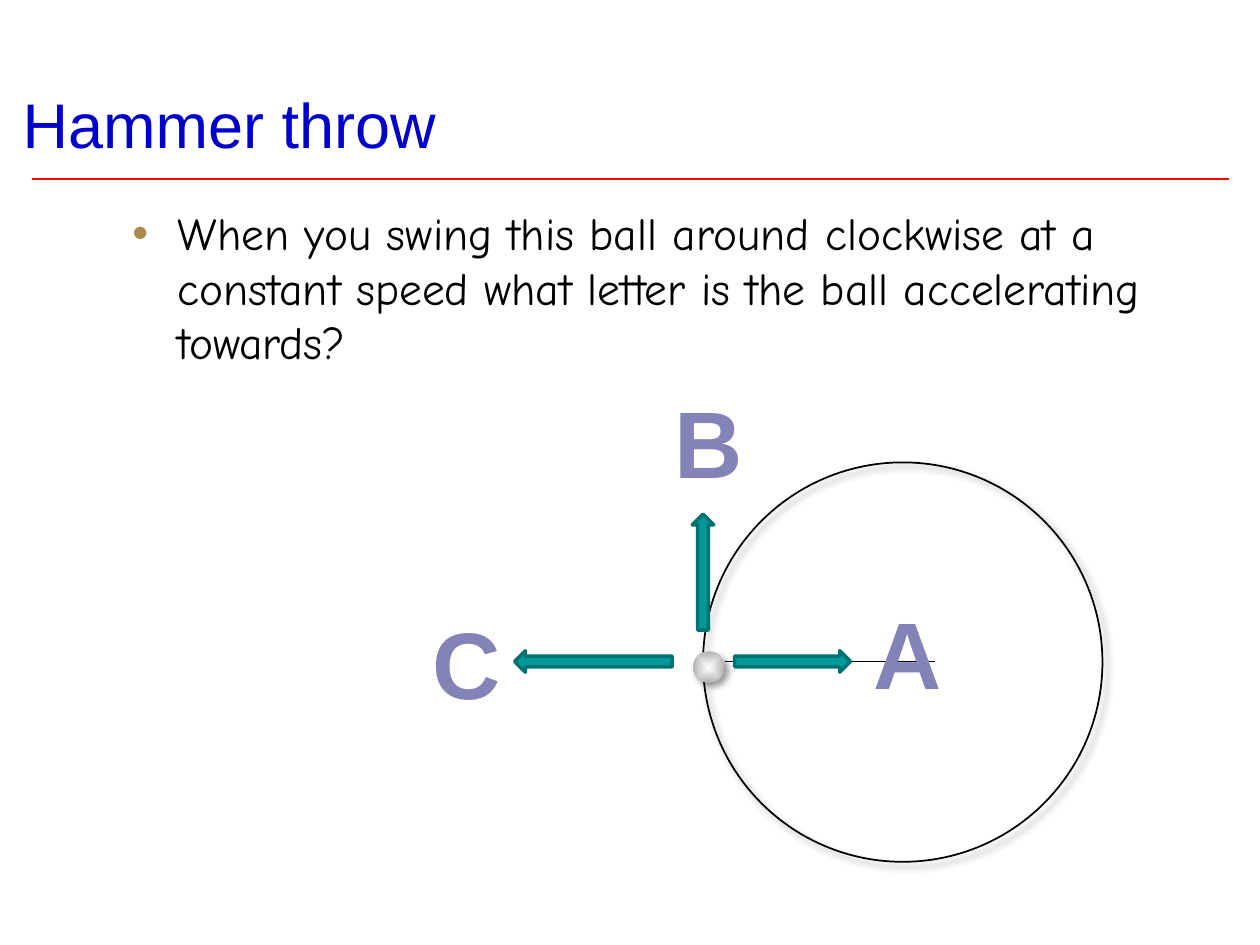
from pptx import Presentation
from pptx.dml.color import RGBColor
from pptx.enum.shapes import MSO_CONNECTOR, MSO_SHAPE
from pptx.enum.text import MSO_ANCHOR, MSO_AUTO_SIZE, PP_ALIGN
from pptx.oxml import parse_xml
from pptx.oxml.ns import nsdecls, qn
from pptx.util import Inches, Pt

COLORS = {
    "title": "0000CC", "rule": "FF0000", "bullet": "A98C4B", "ink": "000000",
    "letter": "8383B7", "arrow": "009999", "arrow_edge": "007171",
    "ball_light": "FFFFFF", "ball_dark": "B2B2B2",
}
TITLE = "Hammer throw"
QUESTION = ("When you swing this ball around clockwise at a constant speed "
            "what letter is the ball accelerating towards?")
TITLE_BOX = (0.08, 0, 9.83, 1.33)
QUESTION_BOX = (0.58, 1.58, 9, 1.58)
RULE = (0.25, 1.42, 9.75, 1.42, "rule", 1.5)
STRING = (5.75, 5.25, 7.42, 5.25, "ink", 0.75)
ORBIT = (5.58, 3.67, 3.17, 3.17)
BALL = (5.5, 5.17, 0.25, 0.25)
LETTERS = [("A", 6.83, 4.67), ("B", 5.25, 3), ("C", 3.33, 4.75)]
LETTER_SIZE = (0.75, 1.01)
ARROWS = [(6.29, 5.25, 0.92, 0), (5.58, 4.54, 0.92, 270), (4.71, 5.25, 1.25, 180)]
ARROW_HEIGHT = 0.17
FORMATS = {
    "title": {"name": "Arial", "size": Pt(36), "bold": False},
    "question": {"name": "Comic Neue", "size": Pt(26), "bold": False},
    "letter": {"name": "Arial", "size": Pt(54), "bold": True},
}


def rgb(key):
    """Return the named colour."""
    return RGBColor.from_string(COLORS[key])


def inches(values):
    """Convert numbers to lengths."""
    return [Inches(value) for value in values]


def write(frame, text, style, color, align, anchor, wrap=True):
    """Put one formatted paragraph in a text frame and return it."""
    settings = {"auto_size": MSO_AUTO_SIZE.NONE, "word_wrap": wrap, "vertical_anchor": anchor}
    for key, value in settings.items():
        setattr(frame, key, value)
    paragraph = frame.paragraphs[0]
    paragraph.alignment = align
    run = paragraph.add_run()
    run.text = text
    for key, value in FORMATS[style].items():
        setattr(run.font, key, value)
    run.font.color.rgb = rgb(color)
    return paragraph


def place(holder, box):
    """Move a placeholder to its box."""
    for key, value in zip(("left", "top", "width", "height"), inches(box)):
        setattr(holder, key, value)


def add_bullet(paragraph):
    """Give the question a coloured bullet and hanging indent."""
    paragraph.level = 1
    paragraph.space_before = Pt(5.2)
    properties = paragraph._p.get_or_add_pPr()
    properties.set("marL", str(Inches(0.73)))
    properties.set("indent", str(Inches(-0.36)))
    for tag in (f'<a:buClr {nsdecls("a")}><a:srgbClr val="{COLORS["bullet"]}"/></a:buClr>',
                f'<a:buFont {nsdecls("a")} typeface="Arial"/>',
                f'<a:buChar {nsdecls("a")} char="•"/>'):
        properties.append(parse_xml(tag))


def add_line(slide, x1, y1, x2, y2, color, width):
    """Draw a straight line without a shadow."""
    line = slide.shapes.add_connector(MSO_CONNECTOR.STRAIGHT, *inches((x1, y1, x2, y2)))
    line.line.color.rgb = rgb(color)
    line.line.width = Pt(width)
    line._element.spPr.append(parse_xml(f'<a:effectLst {nsdecls("a")}/>'))


def add_circle(slide, box):
    """Draw a circle with a soft shadow to the lower right."""
    circle = slide.shapes.add_shape(MSO_SHAPE.OVAL, *inches(box))
    circle.shadow.inherit = False
    circle._element.spPr.find(qn("a:effectLst")).append(parse_xml(
        f'<a:outerShdw {nsdecls("a")} blurRad="{Pt(4)}" dist="{Pt(3)}" dir="2700000" '
        f'algn="tl" rotWithShape="0"><a:srgbClr val="{COLORS["ink"]}">'
        '<a:alpha val="40000"/></a:srgbClr></a:outerShdw>'))
    return circle


def add_orbit(slide):
    """Draw the outline of the ball's circular path."""
    orbit = add_circle(slide, ORBIT)
    orbit.fill.background()
    orbit.line.color.rgb = rgb("ink")
    orbit.line.width = Pt(1)


def add_ball(slide):
    """Draw the ball shaded from its centre."""
    ball = add_circle(slide, BALL)
    ball.line.fill.background()
    ball.fill.gradient()
    for stop, color in zip(ball.fill.gradient_stops, ("ball_light", "ball_dark")):
        stop.color.rgb = rgb(color)
    gradient = ball._element.spPr.find(qn("a:gradFill"))
    gradient.replace(gradient.find(qn("a:lin")), parse_xml(
        f'<a:path {nsdecls("a")} path="shape">'
        '<a:fillToRect l="50000" t="50000" r="50000" b="50000"/></a:path>'))


def add_arrow(slide, center_x, center_y, length, rotation):
    """Draw a block arrow around its centre."""
    box = (center_x - length / 2, center_y - ARROW_HEIGHT / 2, length, ARROW_HEIGHT)
    arrow = slide.shapes.add_shape(MSO_SHAPE.RIGHT_ARROW, *inches(box))
    arrow.rotation = rotation
    arrow.shadow.inherit = False
    arrow.fill.solid()
    arrow.fill.fore_color.rgb = rgb("arrow")
    arrow.line.color.rgb = rgb("arrow_edge")
    arrow.line.width = Pt(2)


def main():
    """Build the hammer throw slide."""
    deck = Presentation()
    deck.slide_width, deck.slide_height = inches((10, 7.5))
    slide = deck.slides.add_slide(deck.slide_layouts[1])
    title, question = slide.placeholders
    place(title, TITLE_BOX)
    write(title.text_frame, TITLE, "title", "title", PP_ALIGN.LEFT, MSO_ANCHOR.BOTTOM)
    place(question, QUESTION_BOX)
    add_bullet(write(question.text_frame, QUESTION, "question", "ink",
                     PP_ALIGN.LEFT, MSO_ANCHOR.TOP))
    add_line(slide, *RULE)
    add_orbit(slide)
    add_line(slide, *STRING)
    add_ball(slide)
    for letter, left, top in LETTERS:
        label = slide.shapes.add_textbox(*inches((left, top, *LETTER_SIZE)))
        write(label.text_frame, letter, "letter", "letter",
              PP_ALIGN.CENTER, MSO_ANCHOR.TOP, wrap=False)
    for arrow in ARROWS:
        add_arrow(slide, *arrow)
    deck.save("out.pptx")


if __name__ == "__main__":
    main()
